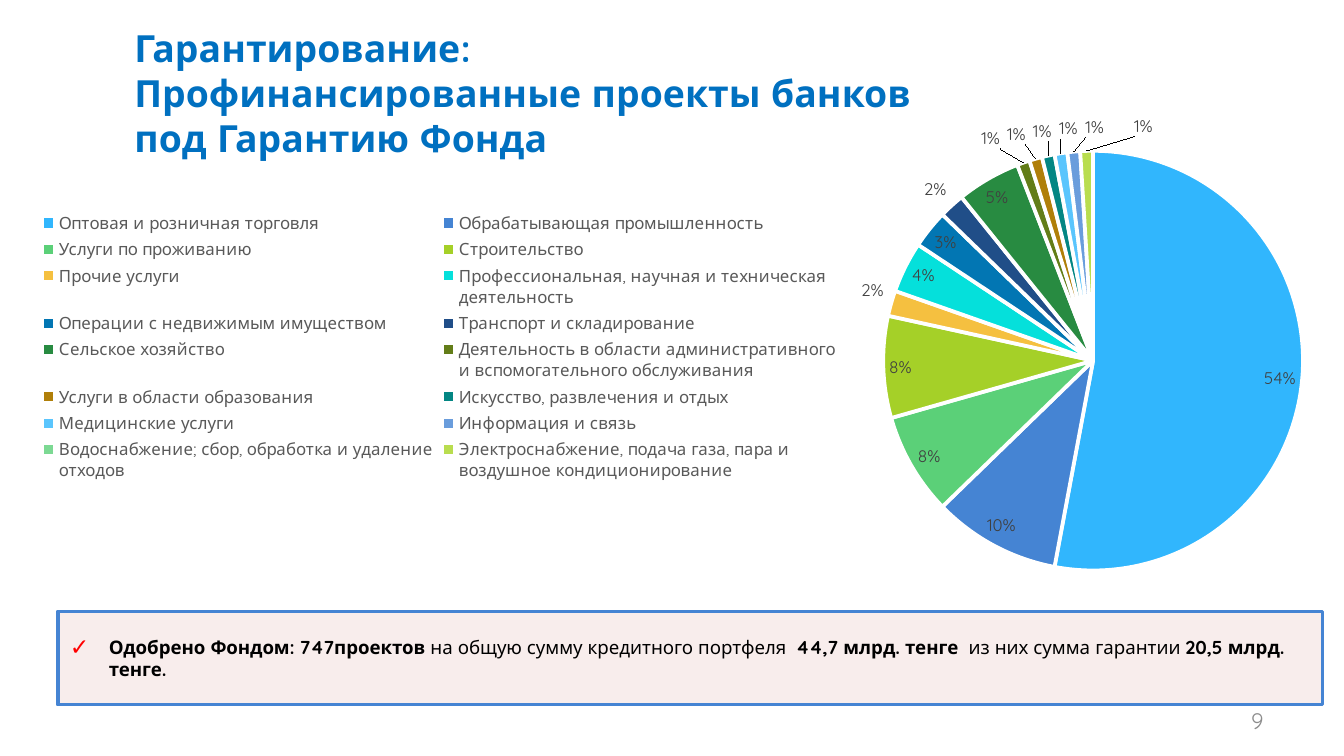
import dataclasses
import typing

import lxml.etree
import pptx
import pptx.chart.data
import pptx.dml.color
import pptx.enum.chart
import pptx.enum.shapes
import pptx.enum.text
import pptx.oxml
import pptx.oxml.ns
import pptx.util

WIDTH = pptx.util.Inches(10)
HEIGHT = WIDTH * 9 // 16
FONT = "Quicksand"
COLORS = {
    "title": "0070C0", "number": "8C8C8C", "black": "000000", "white": "FFFFFF",
    "legend": "595959", "label": "404040", "panel": "F2DCDB", "border": "4584D3",
    "check": "FF0000",
}


@dataclasses.dataclass
class Area:
    """A rectangle in percent of its container's width and height."""
    left: float
    top: float
    width: float
    height: float

    def on_slide(self) -> tuple[int, ...]:
        return tuple(int(percent * size / 100) for percent, size in zip(
            dataclasses.astuple(self), (WIDTH, HEIGHT, WIDTH, HEIGHT)))


class Sector(typing.NamedTuple):
    name: str
    share: float
    color: str


SECTORS = [
    Sector("Оптовая и розничная торговля", 0.54, "31B6FD"),
    Sector("Обрабатывающая промышленность", 0.10, "4584D3"),
    Sector("Услуги по проживанию", 0.08, "5BD078"),
    Sector("Строительство", 0.08, "A5D028"),
    Sector("Прочие услуги", 0.02, "F5C040"),
    Sector("Профессиональная, научная и техническая деятельность", 0.04, "05E0DB"),
    Sector("Операции с недвижимым имуществом", 0.03, "0276B3"),
    Sector("Транспорт и складирование", 0.02, "204E88"),
    Sector("Сельское хозяйство", 0.05, "288B41"),
    Sector("Деятельность в области административного и вспомогательного обслуживания",
           0.01, "637D18"),
    Sector("Услуги в области образования", 0.01, "B07F09"),
    Sector("Искусство, развлечения и отдых", 0.01, "038683"),
    Sector("Медицинские услуги", 0.01, "5AC5FD"),
    Sector("Информация и связь", 0.01, "6A9DDC"),
    Sector("Водоснабжение; сбор, обработка и удаление отходов", 0, "7CD993"),
    Sector("Электроснабжение, подача газа, пара и воздушное кондиционирование",
           0.01, "B9DD4F"),
]
FIRST_TINY = 9
TITLE = ["Гарантирование:", "Профинансированные проекты банков", "под Гарантию Фонда"]
SUMMARY = [
    ("Одобрено Фондом: 747проектов ", True),
    ("на общую сумму кредитного портфеля  ", False),
    ("44,7 млрд. тенге  ", True),
    ("из них сумма гарантии ", False),
    ("20,5 млрд. тенге.", True),
]


def rgb(name: str) -> pptx.dml.color.RGBColor:
    return pptx.dml.color.RGBColor.from_string(COLORS.get(name, name))


def set_values(target: typing.Any, values: dict[str, typing.Any]) -> None:
    for key, value in values.items():
        setattr(target, key, value)


def style_font(font: typing.Any, size: float, color: str, bold: bool = False) -> None:
    set_values(font, {"name": FONT, "size": pptx.util.Pt(size), "bold": bold})
    font.color.rgb = rgb(color)


def set_frame(frame: typing.Any, anchor: str, inset: tuple[float, float]) -> None:
    across, down = map(pptx.util.Inches, inset)
    set_values(frame, {
        "word_wrap": True, "auto_size": pptx.enum.text.MSO_AUTO_SIZE.NONE,
        "vertical_anchor": pptx.enum.text.MSO_ANCHOR[anchor],
        "margin_left": across, "margin_right": across,
        "margin_top": down, "margin_bottom": down})


def manual_layout(percents: dict[str, float], edge: bool = False) -> typing.Any:
    """Chart layout: an offset, or a position from the chart's edge."""
    values = {"layoutTarget": "inner", "xMode": "edge", "yMode": "edge"} if edge else {}
    values |= {tag: str(percent / 100) for tag, percent in percents.items()}
    layout = pptx.oxml.parse_xml(
        f"<c:layout {pptx.oxml.ns.nsdecls('c')}><c:manualLayout/></c:layout>")
    for tag, value in values.items():
        lxml.etree.SubElement(layout[0], pptx.oxml.ns.qn(f"c:{tag}"), val=value)
    return layout


def place_plot(plot_area: typing.Any, area: Area) -> None:
    for old in plot_area.findall(pptx.oxml.ns.qn("c:layout")):
        plot_area.remove(old)
    percents = dict(zip("xywh", dataclasses.astuple(area)))
    plot_area.insert(0, manual_layout(percents, edge=True))


def draw_title(slide: typing.Any, area: Area) -> None:
    title = slide.shapes.title
    set_values(title, dict(zip(("left", "top", "width", "height"), area.on_slide())))
    frame = title.text_frame
    frame.text = "\n".join(TITLE)
    set_frame(frame, "TOP", (0.1, 0.05))
    for para in frame.paragraphs:
        set_values(para, {"alignment": pptx.enum.text.PP_ALIGN.LEFT,
                          "line_spacing": 1.0, "space_before": pptx.util.Pt(0)})
        for span in para.runs:
            style_font(span.font, 20, "title", True)


def draw_pie(slide: typing.Any, area: Area) -> None:
    data = pptx.chart.data.CategoryChartData(number_format="0%")
    data.categories = [sector.name for sector in SECTORS]
    data.add_series("Series 1", [sector.share for sector in SECTORS])
    chart = slide.shapes.add_chart(
        pptx.enum.chart.XL_CHART_TYPE.PIE, *area.on_slide(), data).chart
    style_font(chart.font, 10, "black")
    set_values(chart, {"has_title": False, "has_legend": True})
    set_values(chart.legend, {"position": pptx.enum.chart.XL_LEGEND_POSITION.LEFT,
                              "include_in_layout": False})
    style_font(chart.legend.font, 9, "legend")
    plot = chart.plots[0]
    plot.vary_by_categories = True
    place_plot(plot._element.getparent(), Area(66.1, 13, 32.4, 79.3))

    series = plot.series[0]
    positions = pptx.enum.chart.XL_LABEL_POSITION
    labels = series.data_labels
    set_values(labels, {"show_value": True, "show_percentage": False,
                        "number_format": "0%", "number_format_is_linked": False,
                        "position": positions.BEST_FIT})
    style_font(labels.font, 9, "label")
    leader = labels._element.find(pptx.oxml.ns.qn("c:showLeaderLines"))
    if leader is None:
        leader = lxml.etree.SubElement(
            labels._element, pptx.oxml.ns.qn("c:showLeaderLines"))
    leader.set("val", "1")
    for index, sector in enumerate(SECTORS):
        point = series.points[index]
        point.format.fill.solid()
        point.format.fill.fore_color.rgb = rgb(sector.color)
        point.format.line.color.rgb = rgb("white")
        point.format.line.width = pptx.util.Pt(2)
        if index >= FIRST_TINY:
            label = point.data_label
            style_font(label.font, 9, "label")
            label.position = positions.OUTSIDE_END
            offset = {"x": index - FIRST_TINY - 1.6, "y": -1.2}
            label._dLbl.find(pptx.oxml.ns.qn("c:idx")).addnext(manual_layout(offset))


def draw_summary(slide: typing.Any, area: Area) -> None:
    box = slide.shapes.add_shape(
        pptx.enum.shapes.MSO_SHAPE.RECTANGLE, *area.on_slide())
    box.shadow.inherit = False
    box.fill.solid()
    box.fill.fore_color.rgb = rgb("panel")
    color = box.fill._xPr.find(".//" + pptx.oxml.ns.qn("a:srgbClr"))
    lxml.etree.SubElement(color, pptx.oxml.ns.qn("a:alpha"), val="50000")
    box.line.color.rgb = rgb("border")
    box.line.width = pptx.util.Pt(2)
    set_frame(box.text_frame, "MIDDLE", (0.08, 0.04))
    para = box.text_frame.paragraphs[0]
    props = para._p.get_or_add_pPr()
    props.set("marL", str(pptx.util.Inches(0.3)))
    props.set("indent", str(pptx.util.Inches(-0.29)))
    space = pptx.oxml.ns.nsdecls("a")
    for bullet in (f'<a:buClr {space}><a:srgbClr val="{COLORS["check"]}"/></a:buClr>',
                   f'<a:buSzPct {space} val="125000"/>',
                   f'<a:buFont {space} typeface="{FONT}"/>',
                   f'<a:buChar {space} char="✓"/>'):
        props.append(pptx.oxml.parse_xml(bullet))
    set_values(para, {"alignment": pptx.enum.text.PP_ALIGN.LEFT, "line_spacing": 1.0,
                      "space_after": pptx.util.Pt(6)})
    for text, bold in SUMMARY:
        span = para.add_run()
        span.text = text
        style_font(span.font, 10, "black", bold)


def draw_page_number(slide: typing.Any, area: Area) -> None:
    box = slide.shapes.add_textbox(*area.on_slide())
    set_frame(box.text_frame, "MIDDLE", (0.1, 0.05))
    para = box.text_frame.paragraphs[0]
    para.alignment = pptx.enum.text.PP_ALIGN.RIGHT
    span = para.add_run()
    span.text = "9"
    style_font(span.font, 12, "number")


def main() -> None:
    deck = pptx.Presentation()
    set_values(deck, {"slide_width": WIDTH, "slide_height": HEIGHT})
    slide = deck.slides.add_slide(deck.slide_layouts[5])
    draw_page_number(slide, Area(71.7, 92.6, 23.3, 5.3))
    draw_title(slide, Area(9, 2.5, 81.1, 11.2))
    draw_summary(slide, Area(4.3, 80.9, 94.1, 12.3))
    draw_pie(slide, Area(2, 10.85, 96.4, 70.05))
    deck.save("out.pptx")


if __name__ == "__main__":
    main()
